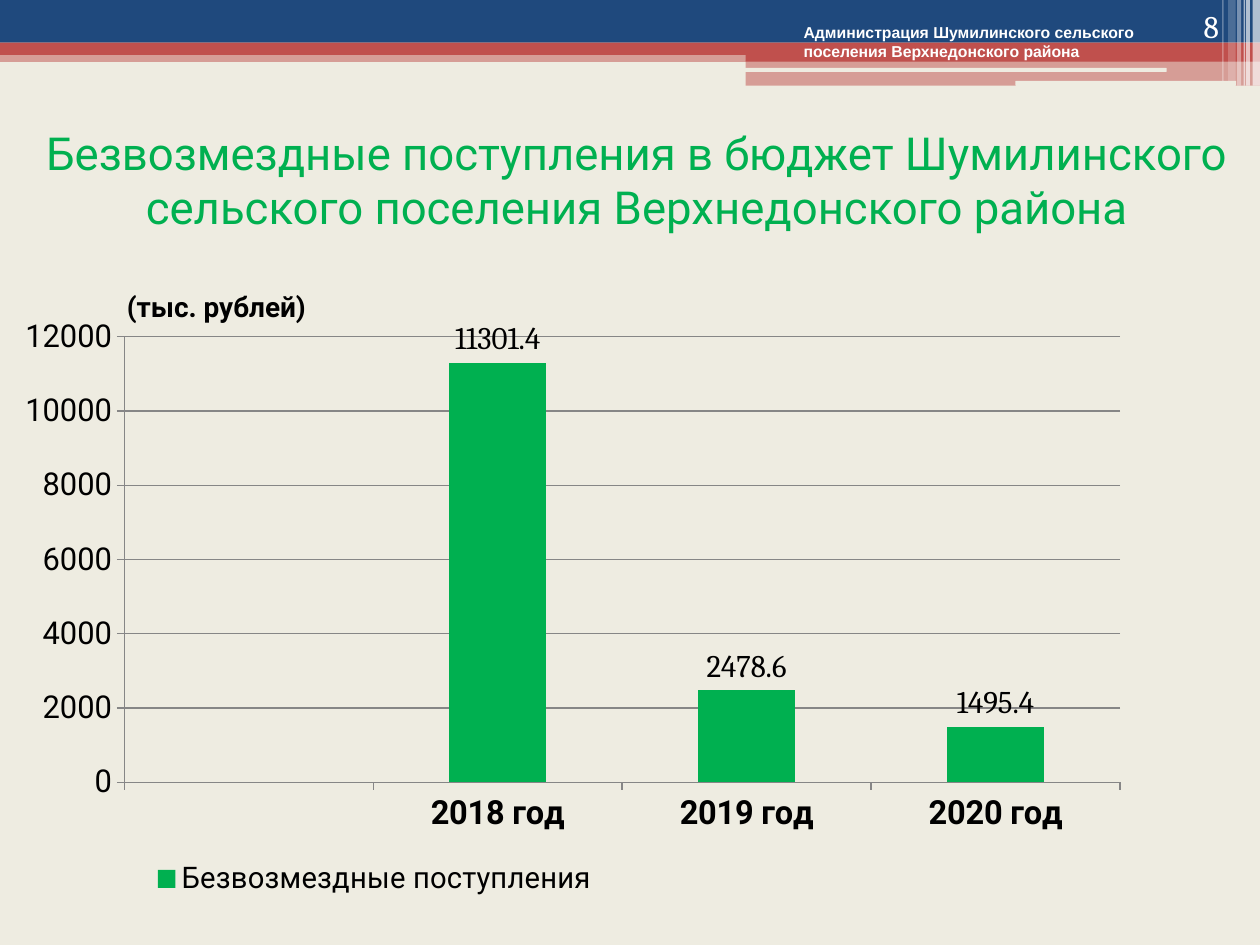
import pptx
import pptx.chart.data
import pptx.dml.color
import pptx.enum.chart
import pptx.enum.shapes
import pptx.enum.text
import pptx.oxml
import pptx.oxml.ns
import pptx.util
from pptx.util import Cm, Pt

RGBColor = pptx.dml.color.RGBColor
CREAM = RGBColor(0xEE, 0xEC, 0xE1)
NAVY = RGBColor(0x1F, 0x49, 0x7D)
RED = RGBColor(0xC0, 0x50, 0x4D)
GREEN = RGBColor(0x00, 0xB0, 0x50)
GREY = RGBColor(0x86, 0x86, 0x86)
WHITE = RGBColor(0xFF, 0xFF, 0xFF)
BLACK = RGBColor(0x00, 0x00, 0x00)

ALIGN = pptx.enum.text.PP_ALIGN
ANCHOR = pptx.enum.text.MSO_ANCHOR
SHAPE = pptx.enum.shapes.MSO_SHAPE


def set_font(font, name, size, color, bold=False):
    font.name, font.size, font.bold = name, Pt(size), bold
    font.color.rgb = color


def add_bar(slide, left, top, width, height, color, opacity=100, kind=SHAPE.RECTANGLE):
    bar = slide.shapes.add_shape(kind, left, top, width, height)
    bar.shadow.inherit = False
    bar.line.fill.background()
    bar.fill.solid()
    bar.fill.fore_color.rgb = color
    if opacity < 100:
        color_element = bar.fill._xPr.find(".//" + pptx.oxml.ns.qn("a:srgbClr"))
        alpha = pptx.oxml.parse_xml(
            f'<a:alpha {pptx.oxml.ns.nsdecls("a")} val="{opacity * 1000}"/>')
        color_element.append(alpha)


def add_text(slide, box, text, name, size, color, bold=False,
             align=ALIGN.LEFT, anchor=ANCHOR.TOP):
    frame = slide.shapes.add_textbox(*box).text_frame
    frame.word_wrap = True
    frame.vertical_anchor = anchor
    paragraph = frame.paragraphs[0]
    paragraph.text = text
    paragraph.alignment = align
    set_font(paragraph.font, name, size, color, bold)


def add_header(slide, left, top, width):
    """Bands, right-hand tab, light grooves and thin vertical stripes, then the header texts."""
    tab_left = left + Cm(15.03)
    tab_width = left + width - tab_left
    for band_left, offset, band_width, height, color, opacity in (
        (left, 1.02, width, 0.23, RED, 50),
        (left, 0, width, 0.86, NAVY, 100),
        (left, 0.86, width, 0.25, RED, 100),
        (tab_left, 0.99, tab_width, 0.25, RED, 100),
        (tab_left, 1.22, tab_width, 0.51, RED, 50),
    ):
        add_bar(slide, band_left, top + Cm(offset), band_width, Cm(height), color, opacity)

    for groove_left, offset, groove_width, height in (
        (15.01, 1.37, 8.51, 0.08), (20.47, 1.63, 4.45, 0.1),
    ):
        add_bar(slide, left + Cm(groove_left), top + Cm(offset), Cm(groove_width),
                Cm(height), CREAM, kind=SHAPE.ROUNDED_RECTANGLE)

    for from_right, stripe_width, height, opacity in (
        (0.15, 0.15, 1.73, 65), (0.28, 0.08, 1.73, 65), (0.33, 0.03, 1.73, 60),
        (0.46, 0.08, 1.73, 40), (0.64, 0.15, 1.63, 20), (0.76, 0.03, 1.63, 30),
    ):
        add_bar(slide, left + width - Cm(from_right), top, Cm(stripe_width),
                Cm(height), WHITE, opacity)

    add_text(slide, (left + Cm(22.71), top, Cm(2.11), Cm(1.02)), "8",
             "Cambria", 18, WHITE, align=ALIGN.RIGHT, anchor=ANCHOR.BOTTOM)
    add_text(slide, (left + Cm(15.95), top + Cm(0.33), Cm(7.9), Cm(1.02)),
             "Администрация Шумилинского сельского поселения Верхнедонского района",
             "Arial", 9, WHITE, bold=True)


def manual_layout(x, y, width, height, inner=False):
    """Chart layout element, in fractions of the chart area."""
    target = '<c:layoutTarget val="inner"/>' if inner else ""
    return pptx.oxml.parse_xml(
        f'<c:layout {pptx.oxml.ns.nsdecls("c")}><c:manualLayout>{target}'
        '<c:xMode val="edge"/><c:yMode val="edge"/>'
        f'<c:x val="{x}"/><c:y val="{y}"/><c:w val="{width}"/><c:h val="{height}"/>'
        '</c:manualLayout></c:layout>')


def style_axis(axis, size, bold=False):
    set_font(axis.tick_labels.font, "Roboto", size, BLACK, bold)
    axis.major_tick_mark = pptx.enum.chart.XL_TICK_MARK.OUTSIDE
    axis.format.line.color.rgb = GREY
    axis.format.line.width = Pt(0.75)


def add_revenue_chart(slide, left, top, width, height):
    revenue = pptx.chart.data.CategoryChartData()
    revenue.categories = ["", "2018 год", "2019 год", "2020 год"]
    revenue.add_series("Безвозмездные поступления", [None, 11301.4, 2478.6, 1495.4])
    chart = slide.shapes.add_chart(
        pptx.enum.chart.XL_CHART_TYPE.COLUMN_CLUSTERED, left, top, width, height, revenue).chart
    chart.has_title = False
    set_font(chart.font, "Cambria", 18, BLACK)

    style_axis(chart.category_axis, 19, bold=True)
    style_axis(chart.value_axis, 18)
    chart.value_axis.minimum_scale = 0
    chart.value_axis.maximum_scale = 12000
    chart.value_axis.major_unit = 2000
    gridlines = chart.value_axis.major_gridlines.format.line
    gridlines.color.rgb = GREY
    gridlines.width = Pt(0.75)

    plot = chart.plots[0]
    plot.gap_width = 155
    plot.vary_by_categories = False
    columns = plot.series[0]
    columns.format.fill.solid()
    columns.format.fill.fore_color.rgb = GREEN
    values = columns.data_labels
    values.show_value = True
    values.position = pptx.enum.chart.XL_LABEL_POSITION.OUTSIDE_END
    set_font(values.font, "Cambria", 18, BLACK)

    chart.has_legend = True
    legend = chart.legend
    legend.position = pptx.enum.chart.XL_LEGEND_POSITION.BOTTOM
    legend.include_in_layout = False
    set_font(legend.font, "Roboto", 17, BLACK)
    legend._element.insert(1, manual_layout(0.1, 0.92, 0.4, 0.07))

    plot_area = chart._chartSpace.chart.plotArea
    for layout in plot_area.findall(pptx.oxml.ns.qn("c:layout")):
        plot_area.remove(layout)
    plot_area.insert(0, manual_layout(0.07, 0.045, 0.915, 0.748, inner=True))

    add_text(slide, (left + Cm(1.8), top - Cm(0.53), Cm(4.6), Cm(0.94)),
             "(тыс. рублей)", "Roboto", 16, BLACK, bold=True)


def main():
    presentation = pptx.Presentation()
    presentation.slide_width, presentation.slide_height = Cm(25.4), Cm(19.05)
    slide = presentation.slides.add_slide(presentation.slide_layouts[6])
    slide.background.fill.solid()
    slide.background.fill.fore_color.rgb = CREAM

    add_header(slide, Cm(0), Cm(0), presentation.slide_width)
    add_text(slide, (Cm(0.3), Cm(2.13), Cm(25.1), Cm(2.97)),
             "Безвозмездные поступления в бюджет Шумилинского "
             "сельского поселения Верхнедонского района",
             "Roboto", 26, GREEN, align=ALIGN.CENTER, anchor=ANCHOR.MIDDLE)
    add_revenue_chart(slide, Cm(0.51), Cm(6.25), Cm(22.4), Cm(12.01))
    presentation.save("out.pptx")


if __name__ == "__main__":
    main()
